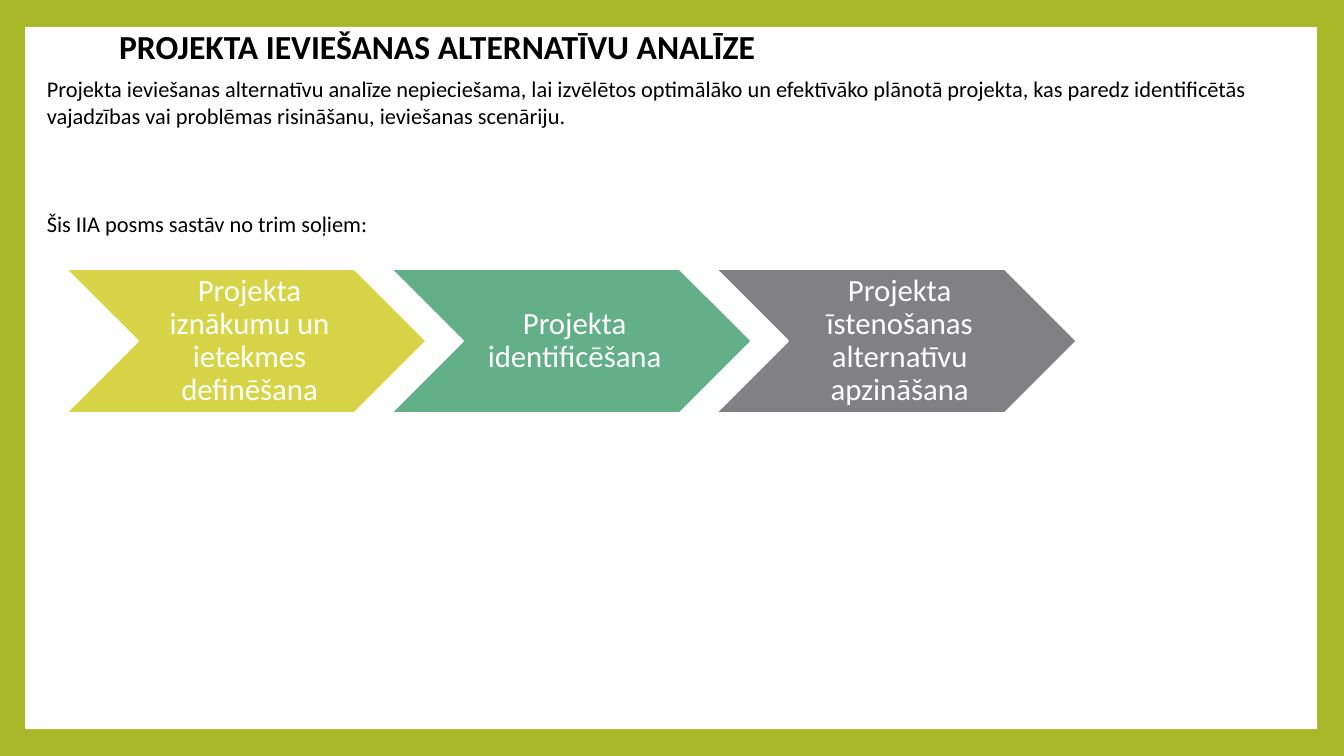
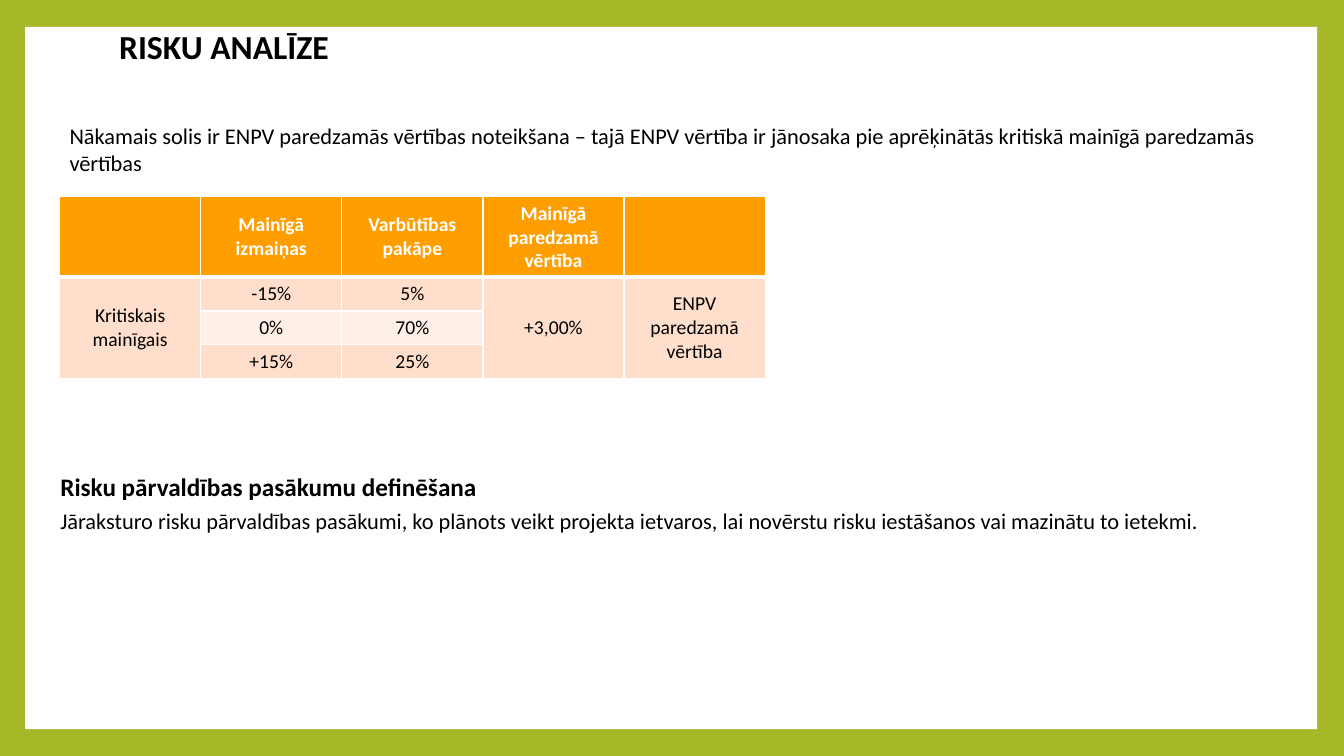
from lxml import etree
from pptx import Presentation
from pptx.dml.color import RGBColor
from pptx.enum.shapes import MSO_SHAPE
from pptx.enum.text import MSO_ANCHOR, PP_ALIGN
from pptx.oxml.ns import qn
from pptx.util import Inches, Pt

RECTANGLE = MSO_SHAPE.RECTANGLE
CHEVRON = MSO_SHAPE.CHEVRON
MIDDLE = MSO_ANCHOR.MIDDLE
TOP = MSO_ANCHOR.TOP
CENTER = PP_ALIGN.CENTER
LEFT = PP_ALIGN.LEFT

GREEN = RGBColor(0xA6, 0xB7, 0x27)
WHITE = RGBColor(0xFF, 0xFF, 0xFF)
BLACK = RGBColor(0x00, 0x00, 0x00)
LIME = RGBColor(0xD7, 0xD4, 0x47)
TEAL = RGBColor(0x62, 0xAF, 0x88)
GREY = RGBColor(0x81, 0x81, 0x83)
ORANGE = RGBColor(0xFE, 0x9E, 0x00)
PEACH = RGBColor(0xFF, 0xDF, 0xCC)
PALE_PEACH = RGBColor(0xFF, 0xF0, 0xE7)

FONT = "Calibri"
COLUMNS, ROWS = 160, 90
BLANK_LAYOUT = 6


class SlideBuilder:
    """Builds framed slides on a grid of 160 columns by 90 rows."""

    def __init__(self):
        self.deck = Presentation()
        self.deck.slide_width = Inches(13.33)
        self.deck.slide_height = Inches(7.5)
        background = self.deck.slide_master.background.fill
        background.solid()
        background.fore_color.rgb = GREEN
        self.page = None

    def across(self, columns):
        return round(self.deck.slide_width * columns / COLUMNS)

    def down(self, rows):
        return round(self.deck.slide_height * rows / ROWS)

    def place(self, left, top, width, height):
        return self.across(left), self.down(top), self.across(width), self.down(height)

    def start_page(self, title):
        self.page = self.deck.slides.add_slide(self.deck.slide_layouts[BLANK_LAYOUT])
        self.shape(RECTANGLE, (3, 3.2, 153.8, 83.6), WHITE)
        self.text((13, 3.2, 139.2, 5.2), [(title, 24, True)], MIDDLE, spacing=0.9)

    def shape(self, kind, area, color):
        shape = self.page.shapes.add_shape(kind, *self.place(*area))
        shape.shadow.inherit = False
        shape.fill.solid()
        shape.fill.fore_color.rgb = color
        shape.line.fill.background()
        return shape

    def format(self, para, size, color=BLACK, bold=False, align=LEFT):
        para.alignment = align
        for span in para.runs:
            span.font.name = FONT
            span.font.size = Pt(size)
            span.font.bold = bold
            span.font.color.rgb = color

    def text(self, area, lines, anchor=TOP, spacing=1.0, before=0, after=0):
        frame = self.page.shapes.add_textbox(*self.place(*area)).text_frame
        frame.word_wrap = True
        frame.vertical_anchor = anchor
        frame.text = "\n".join(words for words, size, bold in lines)
        for para, (words, size, bold) in zip(frame.paragraphs, lines):
            self.format(para, size, bold=bold)
            para.line_spacing = spacing
            para.space_before = Pt(before)
            para.space_after = Pt(after)
        frame.paragraphs[0].space_before = Pt(0)

    def chevrons(self, area, steps):
        left, top, width, height = area
        for index, (words, color) in enumerate(steps):
            box = self.shape(CHEVRON, (left + index * width * 0.9, top, width, height), color)
            box.line.color.rgb = WHITE
            box.line.width = Pt(1.5)
            frame = box.text_frame
            frame.word_wrap = True
            frame.vertical_anchor = MIDDLE
            frame.margin_left = Inches(0.1)
            frame.margin_top = frame.margin_right = frame.margin_bottom = Inches(0.03)
            frame.text = words
            para = frame.paragraphs[0]
            self.format(para, 22, WHITE, align=CENTER)
            para.line_spacing = 0.9

    def borders(self, cell, top, bottom):
        properties = cell._tc.get_or_add_tcPr()
        widths = {"lnL": 1, "lnR": 1, "lnT": top, "lnB": bottom}
        for index, (side, width) in enumerate(widths.items()):
            line = etree.Element(qn("a:" + side), w=str(Pt(width)))
            fill = etree.SubElement(line, qn("a:solidFill"))
            etree.SubElement(fill, qn("a:srgbClr"), val=str(WHITE))
            properties.insert(index, line)

    def table(self, left, top, column_width, row_heights, rows, merged_columns):
        count = len(rows[0])
        area = (left, top, column_width * count, sum(row_heights))
        table = self.page.shapes.add_table(len(rows), count, *self.place(*area)).table
        for column in table.columns:
            column.width = self.across(column_width)
        for row, height in zip(table.rows, row_heights):
            row.height = self.down(height)
        for number, words in enumerate(rows):
            header = number == 0
            color = ORANGE if header else PEACH if number % 2 else PALE_PEACH
            for index, word in enumerate(words):
                cell = table.cell(number, index)
                cell.fill.solid()
                cell.fill.fore_color.rgb = color
                cell.vertical_anchor = MIDDLE
                cell.text = word
                self.format(cell.text_frame.paragraphs[0], 14,
                            WHITE if header else BLACK, header, CENTER)
                self.borders(cell, 3 if number == 1 else 1, 3 if header else 1)
        for index in merged_columns:
            table.cell(1, index).merge(table.cell(len(rows) - 1, index))


def main():
    builder = SlideBuilder()

    builder.start_page("PROJEKTA IEVIEŠANAS ALTERNATĪVU ANALĪZE")
    builder.text((4.4, 8.4, 146.2, 21), [
        ("Projekta ieviešanas alternatīvu analīze nepieciešama, lai izvēlētos optimālāko un "
         "efektīvāko plānotā projekta, kas paredz identificētās vajadzības vai problēmas "
         "risināšanu, ieviešanas scenāriju.", 16, False),
        ("Šis IIA posms sastāv no trim soļiem:", 16, False),
    ], before=58)
    builder.chevrons((7.8, 32, 43, 17.2), [
        ("Projekta iznākumu un ietekmes definēšana", LIME),
        ("Projekta identificēšana", TEAL),
        ("Projekta īstenošanas alternatīvu apzināšana", GREY),
    ])

    builder.start_page("RISKU ANALĪZE")
    builder.text((6, 55.9, 148.7, 24.2), [
        ("Risku pārvaldības pasākumu definēšana", 18, True),
        ("Jāraksturo risku pārvaldības pasākumi, ko plānots veikt projekta ietvaros, lai "
         "novērstu risku iestāšanos vai mazinātu to ietekmi.", 16, False),
    ], spacing=0.9, before=2, after=4)
    builder.text((7.1, 14, 147.6, 7.7), [
        ("Nākamais solis ir ENPV paredzamās vērtības noteikšana – tajā ENPV vērtība ir "
         "jānosaka pie aprēķinātās kritiskā mainīgā paredzamās vērtības", 16, False),
    ])
    builder.table(7.1, 23.4, 16.8, [9.5, 4, 4, 4], [
        ["", "Mainīgā izmaiņas", "Varbūtības pakāpe", "Mainīgā paredzamā vērtība", ""],
        ["Kritiskais mainīgais", "-15%", "5%", "+3,00%", "ENPV paredzamā vērtība"],
        ["", "0%", "70%", "", ""],
        ["", "+15%", "25%", "", ""],
    ], merged_columns=(0, 3, 4))

    builder.deck.save("out.pptx")


if __name__ == "__main__":
    main()
